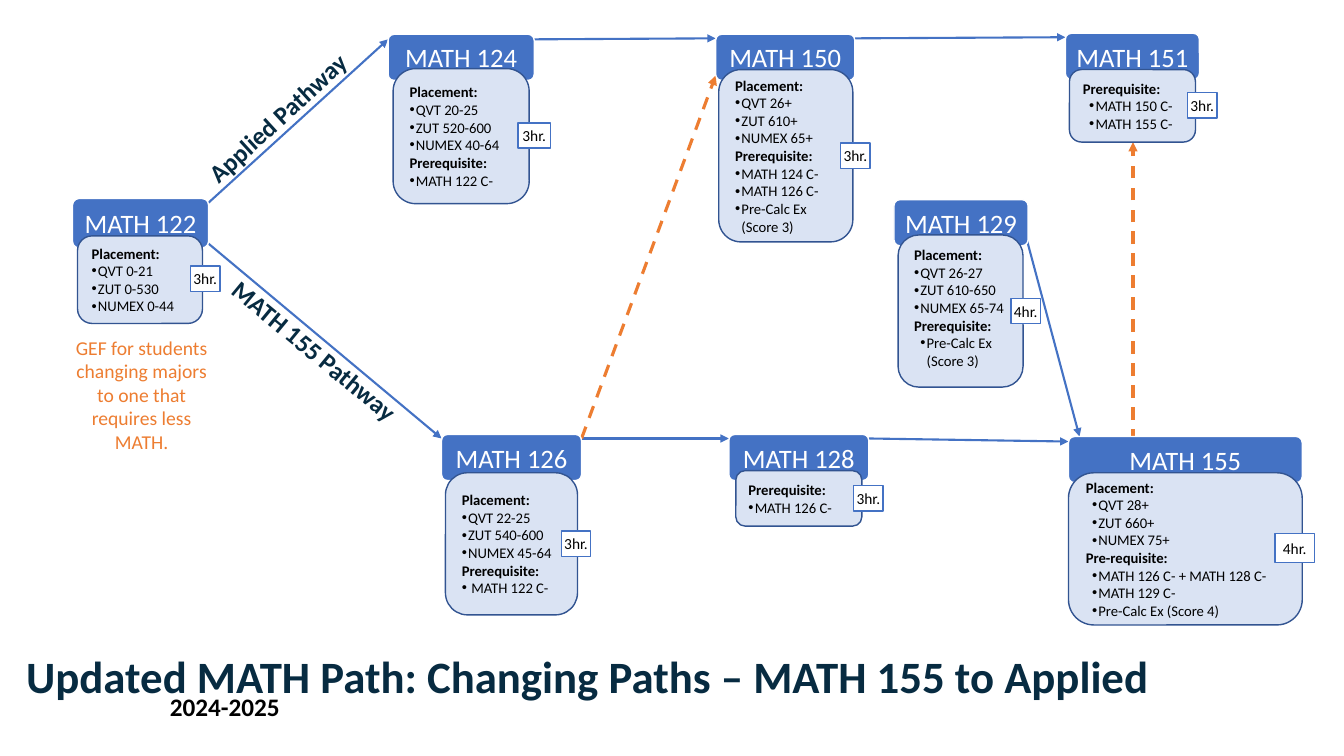
from pptx import Presentation, util as u
from pptx.dml import color
from pptx.enum import dml, shapes, text
from pptx.oxml import ns
from lxml import etree

Pt = u.Pt
BLUE, PALE, EDGE, ORANGE = "4472C4", "DAE3F3", "325491", "ED7D31"
NAVY, BLACK, WHITE = "072B41", "000000", "FFFFFF"
CENTER, LEFT = text.PP_ALIGN.CENTER, text.PP_ALIGN.LEFT
MIDDLE, TOP = text.MSO_ANCHOR.MIDDLE, text.MSO_ANCHOR.TOP
RECT, ROUND = shapes.MSO_SHAPE.RECTANGLE, shapes.MSO_SHAPE.ROUNDED_RECTANGLE
PLACE, PRE = "Placement:", "Prerequisite:"

COURSES = [
    dict(name="MATH 124", hours="3hr.", head=(277.2, 24.5, 104.4, 33),
         body=(280.8, 49, 97.2, 96.5), badge=(370.1, 87.8, 23, 18),
         lines=[PLACE, "QVT 20-25", "ZUT 520-600", "NUMEX 40-64", PRE, "MATH 122 C-"]),
    dict(name="MATH 150", hours="3hr.", head=(511.2, 24.5, 99.4, 33),
         body=(513.4, 49.7, 95.8, 123.1), badge=(600.5, 102.2, 21, 18),
         lines=[PLACE, "QVT 26+", "ZUT 610+", "NUMEX 65+", PRE,
                "MATH 124 C-", "MATH 126 C-", "Pre-Calc Ex (Score 3)"]),
    dict(name="MATH 129", hours="4hr.", head=(638.6, 142.6, 95.8, 33),
         body=(641.5, 167.8, 89.3, 108.7), badge=(722.2, 213.1, 21, 18), anchor=TOP,
         lines=[PLACE, "QVT 26-27", "ZUT 610-650", "NUMEX 65-74", PRE,
                ("Pre-Calc Ex (Score 3)", 9)]),
    dict(name="MATH 122", hours="3hr.", head=(51.8, 141.8, 97.2, 35.3),
         body=(55.4, 168.5, 89.3, 62.6), badge=(136.1, 190.1, 21, 18),
         lines=[PLACE, "QVT 0-21", "ZUT 0-530", "NUMEX 0-44"]),
    dict(name="MATH 151", hours="3hr.", head=(761, 23.8, 95.8, 33),
         body=(763.9, 49.7, 90, 51.8), badge=(848.2, 66.2, 21, 18),
         lines=[PRE, ("MATH 150 C-", 9), ("MATH 155 C-", 9)]),
    dict(name="MATH 126", hours="3hr.", head=(315.4, 310.3, 100, 33),
         body=(318.2, 337.7, 94.3, 101.5), badge=(401, 379.4, 21, 18),
         lines=[PLACE, "QVT 22-25", "ZUT 540-600", "NUMEX 45-64", PRE, " MATH 122 C-"]),
    dict(name="MATH 128", hours="3hr.", head=(520.6, 310.3, 100, 33),
         body=(525.6, 336.2, 90, 39.6), badge=(609.8, 347, 21, 18),
         lines=[PRE, "MATH 126 C-"]),
    dict(name="MATH 155", hours="4hr.", head=(763.2, 311.8, 167, 33),
         body=(763.2, 337.7, 167, 108.7), badge=(910.8, 380.9, 28, 21),
         lines=[PLACE, ("QVT 28+", 9), ("ZUT 660+", 9), ("NUMEX 75+", 9), "Pre-requisite:",
                ("MATH 126 C- + MATH 128 C-", 9), ("MATH 129 C-", 9),
                ("Pre-Calc Ex (Score 4)", 9)]),
]

PATHS = [
    (381.6, 28.1, 511.2, 27.4), (610.6, 27.4, 761, 26.6),
    (148.3, 145.4, 277.2, 28.1), (148.3, 173.5, 315.4, 313.2),
    (415.4, 313.2, 520.6, 313.2), (620.6, 313.2, 763.2, 315.4),
    (733.7, 172.1, 771.1, 311.8),
]
CHANGES = [(809.3, 315.4, 809.3, 101.5), (415.4, 313.2, 511.2, 54)]


def rgb(value):
    return color.RGBColor.from_string(value)


def assign(target, values):
    for name, value in values.items():
        setattr(target, name, value)


def write(para, words, size, ink, bold=False, align=LEFT):
    span = para.add_run()
    span.text = words
    assign(span.font, dict(name="Calibri", size=Pt(size), bold=bold))
    span.font.color.rgb = rgb(ink)
    assign(para, dict(alignment=align, line_spacing=1.0, space_before=Pt(0)))


def frame(box, inset=None, wrap=True, anchor=MIDDLE):
    values = dict(word_wrap=wrap, vertical_anchor=anchor)
    if inset is not None:
        values.update({f"margin_{side}": Pt(inset) for side in ("left", "top", "right", "bottom")})
    assign(box.text_frame, values)
    return box.text_frame.paragraphs[0]


def add_box(page, kind, place, fill, edge, corner=None):
    box = page.shapes.add_shape(kind, *map(Pt, place))
    box.shadow.inherit = False
    box.fill.solid()
    box.fill.fore_color.rgb = rgb(fill)
    box.line.color.rgb = rgb(edge)
    box.line.width = Pt(1)
    if corner is not None:
        box.adjustments[0] = corner
    return box


def add_label(page, place, words, size, ink, bold=True, wrap=False, turn=0):
    box = page.shapes.add_textbox(*map(Pt, place))
    box.rotation = turn
    write(frame(box, wrap=wrap, anchor=TOP), words, size, ink, bold, CENTER)


def add_bullet(para, margin):
    props = para._p.get_or_add_pPr()
    props.set("marL", str(Pt(margin)))
    props.set("indent", str(Pt(-4.5)))
    etree.SubElement(props, ns.qn("a:buFont"), typeface="Arial")
    etree.SubElement(props, ns.qn("a:buChar"), char="•")


def add_course(page, name, hours, head, body, badge, lines, anchor=MIDDLE):
    header = add_box(page, ROUND, head, BLUE, WHITE, 0.13)
    write(frame(header, 2), name, 19, WHITE, align=CENTER)
    details = add_box(page, ROUND, body, PALE, EDGE)
    para = frame(details, anchor=anchor)
    for index, line in enumerate(lines):
        words, margin = line if isinstance(line, tuple) else (line, 4.5)
        heading = words.endswith(":")
        if index:
            para = details.text_frame.add_paragraph()
        write(para, words, 10.5, BLACK, heading)
        if not heading:
            add_bullet(para, margin)
    credit = add_box(page, RECT, badge, WHITE, BLUE)
    write(frame(credit, 0, wrap=False), hours, 11, BLACK, align=CENTER)


def add_arrow(page, ends, ink, width, dash=None):
    arrow = page.shapes.add_connector(shapes.MSO_CONNECTOR.STRAIGHT, *map(Pt, ends))
    arrow.line.color.rgb = rgb(ink)
    assign(arrow.line, dict(width=Pt(width), dash_style=dash))
    props = arrow._element.spPr
    etree.SubElement(props.find(ns.qn("a:ln")), ns.qn("a:tailEnd"), type="triangle")
    etree.SubElement(props, ns.qn("a:effectLst"))


def add_title(page, place, words):
    title = page.shapes.title
    assign(title, dict(zip(("left", "top", "width", "height"), map(Pt, place))))
    title.text_frame.auto_size = text.MSO_AUTO_SIZE.NONE
    write(frame(title, anchor=TOP), words, 32, NAVY, True)


def main():
    deck = Presentation()
    assign(deck, dict(slide_width=Pt(960), slide_height=Pt(540)))
    page = deck.slides.add_slide(deck.slide_layouts.get_by_name("Title Only"))
    add_title(page, (11.5, 459.4, 835, 46),
              "Updated MATH Path: Changing Paths – MATH 155 to Applied")
    add_label(page, (113.8, 490.3, 93.6, 28.8), "2024-2025", 18, BLACK)
    for ends in PATHS:
        add_arrow(page, ends, BLUE, 1.5)
    for ends in CHANGES:
        add_arrow(page, ends, ORANGE, 2.25, dml.MSO_LINE.DASH)
    for course in COURSES:
        add_course(page, **course)
    add_label(page, (43.9, 236.2, 114.5, 92.2),
              "GEF for students changing majors to one that requires less MATH.",
              14, ORANGE, bold=False, wrap=True)
    add_label(page, (127.4, 69.8, 141.1, 28.8), "Applied Pathway", 18, NAVY, turn=317.6)
    add_label(page, (144, 236.2, 161.3, 28.8), "MATH 155 Pathway", 18, NAVY, turn=39.6)
    deck.save("out.pptx")


if __name__ == "__main__":
    main()
